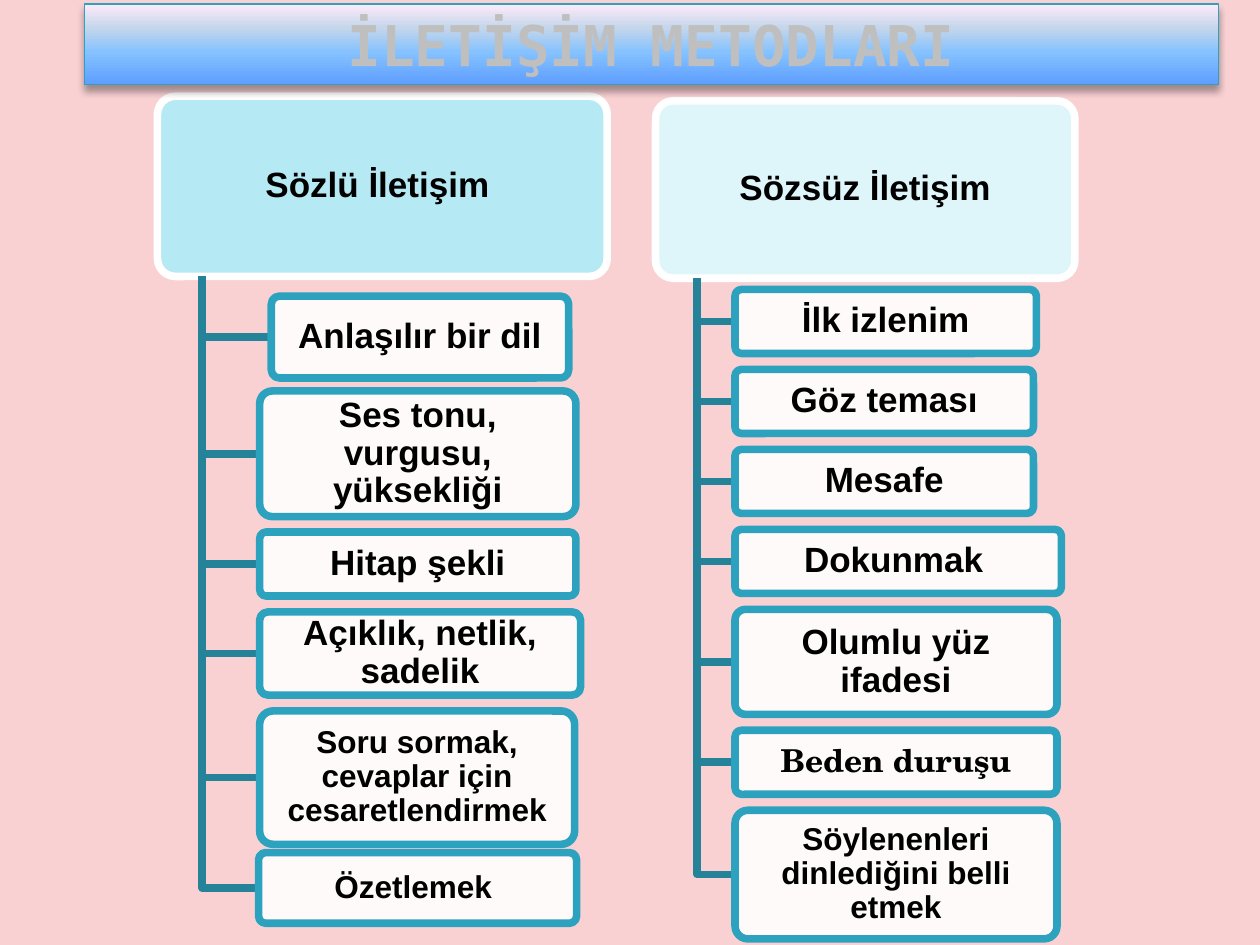
from itertools import accumulate

from lxml import etree
from pptx import Presentation
from pptx.dml.color import RGBColor
from pptx.enum.shapes import MSO_SHAPE as SHAPE
from pptx.enum.text import MSO_ANCHOR as ANCHOR, MSO_AUTO_SIZE as AUTO, PP_ALIGN as ALIGN
from pptx.oxml import parse_xml
from pptx.oxml.ns import nsdecls, qn
from pptx.util import Pt

PINK = RGBColor(0xF9, 0xD1, 0xD3)
AQUA = RGBColor(0xB5, 0xE9, 0xF4)
PALE_AQUA = RGBColor(0xDE, 0xF5, 0xFA)
TEAL = RGBColor(0x2D, 0xA2, 0xBF)
DARK_TEAL = RGBColor(0x24, 0x82, 0x99)
WHITE = RGBColor(0xFF, 0xFF, 0xFF)
BLACK = RGBColor(0, 0, 0)
GREY = RGBColor(0xBF, 0xBF, 0xBF)

SANS, MONO, SERIF = "Arial", "DejaVu Sans Mono", "TeX Gyre Schola"
TITLE_STOPS = [(0, "5E9EFF"), (40, "85C2FF"), (70, "C4D6EB"), (100, "FFEBFA")]


class Deck:
    line_width = 4.33
    corner = 0.1
    frame = dict(word_wrap=True, vertical_anchor=ANCHOR.MIDDLE,
                 margin_left=Pt(3), margin_right=Pt(3),
                 margin_top=Pt(2), margin_bottom=Pt(2))

    def __init__(self, slide):
        self.s = slide

    def background(self, color):
        fill = self.s.background.fill
        fill.solid()
        fill.fore_color.rgb = color

    def shape(self, kind, box, line, width):
        sp = self.s.shapes.add_shape(kind, *map(Pt, box))
        sp.shadow.inherit = False
        sp.line.color.rgb = line
        sp.line.width = Pt(width)
        return sp

    def text(self, sp, runs, spacing=0.9, color=BLACK, **frame):
        """Centre (text, size, font) runs in a shape and return its paragraph."""
        tf = sp.text_frame
        for name, value in frame.items():
            setattr(tf, name, value)
        p = tf.paragraphs[0]
        p.alignment, p.line_spacing = ALIGN.CENTER, spacing
        for words, size, font in runs:
            r = p.add_run()
            r.text = words
            for name, value in dict(size=Pt(size), name=font, bold=True).items():
                setattr(r.font, name, value)
            r.font.color.rgb = color
        return p

    def card(self, box, fill, line, runs, opacity=100):
        sp = self.shape(SHAPE.ROUNDED_RECTANGLE, box, line, self.line_width)
        sp.adjustments[0] = self.corner
        sp.fill.solid()
        sp.fill.fore_color.rgb = fill
        if opacity < 100:
            color = sp._element.spPr.find(qn("a:solidFill"))[0]
            etree.SubElement(color, qn("a:alpha")).set("val", str(opacity * 1000))
        self.text(sp, runs, **self.frame)

    def elbow(self, x, top, right, bottom):
        """Draw a branch down from (x, top), then across to (right, bottom)."""
        builder = self.s.shapes.build_freeform(Pt(x), Pt(top))
        builder.add_line_segments([(Pt(x), Pt(bottom)), (Pt(right), Pt(bottom))],
                                  close=False)
        sp = builder.convert_to_shape()
        sp.shadow.inherit = False
        sp.fill.background()
        sp.line.color.rgb = DARK_TEAL
        sp.line.width = Pt(self.line_width)

    def column(self, header, fill, heading, spine, items):
        """Draw a header card and a branch to each (box, runs) item."""
        self.card(header, fill, WHITE, [(heading, 20, SANS)])
        bottom = header[1] + header[3]
        for box, runs in items:
            left, top, _, height = box
            self.elbow(spine, bottom, left, top + height / 2)
            self.card(box, WHITE, TEAL, runs, opacity=90)

    def title(self, box, words):
        sp = self.shape(SHAPE.RECTANGLE, box, TEAL, 0.75)
        stops = "".join(f'<a:gs pos="{pos * 1000}"><a:srgbClr val="{color}"/></a:gs>'
                        for pos, color in TITLE_STOPS)
        spPr = sp._element.spPr
        spPr.find(qn("a:prstGeom")).addnext(parse_xml(
            f'<a:gradFill {nsdecls("a")} rotWithShape="1"><a:gsLst>{stops}</a:gsLst>'
            '<a:lin ang="16200000" scaled="0"/></a:gradFill>'))
        spPr.find(qn("a:effectLst")).append(parse_xml(
            f'<a:outerShdw {nsdecls("a")} blurRad="{Pt(4)}" dist="{Pt(3)}" dir="5400000"'
            ' rotWithShape="0"><a:srgbClr val="000000"><a:alpha val="35000"/>'
            '</a:srgbClr></a:outerShdw>'))
        p = self.text(sp, [(words, 32, MONO)], 1.0, GREY, word_wrap=True,
                      vertical_anchor=ANCHOR.MIDDLE, auto_size=AUTO.SHAPE_TO_FIT_TEXT)
        p.runs[0].font._element.insert(0, parse_xml(
            f'<a:ln {nsdecls("a")} w="{Pt(1.45)}"><a:solidFill>'
            '<a:srgbClr val="FFFFFF"/></a:solidFill></a:ln>'))


VERBAL = [
    ((155, 169.2, 170, 46.8), [("Anlaşılır bir dil", 20, SANS)]),
    ((148.4, 223.4, 180.7, 71.8), [("Ses tonu, vurgusu, yüksekliği", 20, SANS)]),
    ((148.4, 304, 180.7, 36.6), [("Hitap şekli", 20, SANS)]),
    ((148.4, 349.7, 183.4, 47.5), [("Açıklık, netlik, sadelik", 20, SANS)]),
    ((148.4, 406.3, 180, 76.2), [("Soru sormak, cevaplar için cesaretlendirmek", 18, SANS)]),
    ((147.8, 487.2, 181.7, 40.4), [("Özetlemek ", 18, SANS)]),
]

# Width, height, runs
NONVERBAL = [
    (172.2, 36.6, [("İlk izlenim", 20, SANS)]),
    (170.6, 36.6, [("Göz teması", 20, SANS)]),
    (170.6, 36.6, [("Mesafe", 20, SANS)]),
    (186.5, 36.6, [("Dokunmak", 20, SANS), (" ", 18, SERIF)]),
    (184, 60, [("Olumlu yüz ifadesi", 20, SANS)]),
    (184, 36.6, [("Beden duruşu", 18, SERIF)]),
    (184, 73.5, [("Söylenenleri dinlediğini belli etmek", 18, SANS)]),
]
NONVERBAL_LEFT, NONVERBAL_TOP, GAP = 420, 165.4, 9.1


def main():
    prs = Presentation()
    prs.slide_width, prs.slide_height = Pt(720), Pt(540)
    deck = Deck(prs.slides.add_slide(prs.slide_layouts[6]))
    deck.background(PINK)
    deck.column((90, 55, 257, 103), AQUA, "Sözlü İletişim ", 115.6, VERBAL)

    tops = accumulate((height + GAP for _, height, _ in NONVERBAL), initial=NONVERBAL_TOP)
    items = [((NONVERBAL_LEFT, top, width, height), runs)
             for top, (width, height, runs) in zip(tops, NONVERBAL)]
    deck.column((374.6, 57.6, 239.6, 101.4), PALE_AQUA, "Sözsüz İletişim", 398.4, items)
    deck.title((48.2, 2.2, 648, 46), "İLETİŞİM METODLARI")
    prs.save("out.pptx")


if __name__ == "__main__":
    main()
